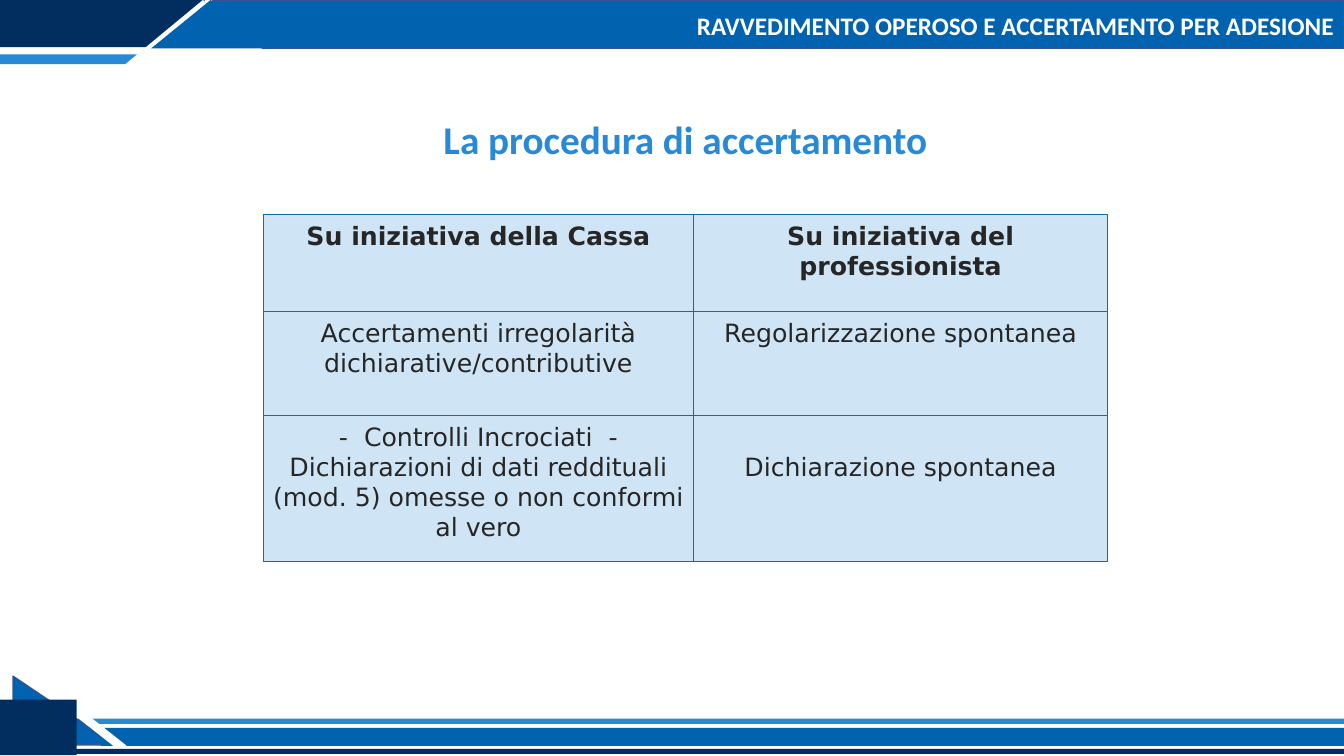
from dataclasses import dataclass
from itertools import accumulate

from lxml import etree
from pptx import Presentation
from pptx import util as u
from pptx.dml.color import RGBColor
from pptx.enum import shapes, text
from pptx.oxml import ns


@dataclass(frozen=True)
class Theme:
    navy: str = "022E5F"
    blue: str = "0162AF"
    sky: str = "2889D6"
    white: str = "FFFFFF"
    outline: str = "325491"
    cell_outline: str = "0073B2"
    ink: str = "262626"
    cell_opacity: int = 22
    heading_font: str = "Calibri"
    cell_font: str = "DejaVu Sans"
    banner_size: int = 18
    title_size: int = 28
    cell_size: int = 18


THEME = Theme()
KIND = shapes.MSO_SHAPE
ALIGN = text.PP_ALIGN
ANCHOR = text.MSO_ANCHOR
SLIDE_W, SLIDE_H = 33.87, 19.05


def rgb(value):
    return RGBColor.from_string(value)


def cm(*lengths):
    return [u.Cm(length) for length in lengths]


def add_block(slide, kind, place, fill, line=None, line_width=1):
    block = slide.shapes.add_shape(kind, *cm(*place))
    block.shadow.inherit = False
    block.fill.solid()
    block.fill.fore_color.rgb = rgb(fill)
    if line:
        block.line.color.rgb = rgb(line)
        block.line.width = u.Pt(line_width)
    else:
        block.line.fill.background()
    return block


def write(frame, wording, font, size, color, bold, align):
    frame.word_wrap = True
    frame.text = wording
    for paragraph in frame.paragraphs:
        paragraph.alignment = align
        paragraph.font.name = font
        paragraph.font.size = u.Pt(size)
        paragraph.font.bold = bold
        paragraph.font.color.rgb = rgb(color)


def add_header(slide, box, wording):
    x, y, w, h = box
    add_block(slide, KIND.RECTANGLE, (x + 5.36, y + 0.03, w - 5.36, 1.19), THEME.blue, THEME.outline)
    add_block(slide, KIND.RECTANGLE, (x, y + 1.37, 3.45, 0.25), THEME.sky)
    add_block(slide, KIND.RECTANGLE, (x, y, 5.16, 1.19), THEME.navy)
    add_block(slide, KIND.ISOSCELES_TRIANGLE, (x + 3.12, y, 3.99, h), THEME.white)
    add_block(slide, KIND.ISOSCELES_TRIANGLE, (x + 3.81, y, 3, 1.22), THEME.blue)
    banner = slide.shapes.add_textbox(*cm(x + 5.03, y + 0.1, w - 5.03, 1.19)).text_frame
    write(banner, wording, THEME.heading_font, THEME.banner_size, THEME.white, True, ALIGN.RIGHT)
    banner.vertical_anchor = ANCHOR.MIDDLE
    banner.paragraphs[0].line_spacing = 0.9


def add_footer(slide, box):
    x, y, w, h = box
    add_block(slide, KIND.RECTANGLE, (x + 1.93, y + 1.07, w - 1.93, 0.13), THEME.sky)
    add_block(slide, KIND.RIGHT_TRIANGLE, (x + 0.33, y, 2.57, 1.73), THEME.blue, THEME.outline)
    add_block(slide, KIND.RECTANGLE, (x + 2.54, y + 1.3, w - 2.54, 0.46), THEME.blue)
    slash = slide.shapes.add_connector(
        shapes.MSO_CONNECTOR.STRAIGHT, *cm(x + 3.12, y + 1.83, x + 1.93, y + 0.89))
    slash.line.color.rgb = rgb(THEME.white)
    slash.line.width = u.Pt(6)
    etree.SubElement(slash._element.spPr, ns.qn("a:effectLst"))
    add_block(slide, KIND.RECTANGLE, (x, y + 0.59, 1.93, h - 0.61), THEME.navy)
    add_block(slide, KIND.RECTANGLE, (x + 1.65, y + 1.83, w - 1.65, 0.13), THEME.navy)


def add_title(slide, box, wording):
    title = slide.shapes.add_textbox(*cm(*box)).text_frame
    write(title, wording, THEME.heading_font, THEME.title_size, THEME.sky, True, ALIGN.CENTER)


def add_cell(slide, box, wording, bold, top_margin):
    cell = add_block(slide, KIND.RECTANGLE, box, THEME.sky, THEME.cell_outline, 0.75)
    color = cell._element.spPr.find(ns.qn("a:solidFill"))[0]
    etree.SubElement(color, ns.qn("a:alpha"), val=str(THEME.cell_opacity * 1000))
    frame = cell.text_frame
    write(frame, wording, THEME.cell_font, THEME.cell_size, THEME.ink, bold, ALIGN.CENTER)
    frame.vertical_anchor = ANCHOR.TOP
    frame.margin_top = u.Cm(top_margin)


def add_procedures(slide, box, rows):
    x, y, w, h = box
    widths = (0.51 * w, 0.49 * w)
    heights = (0.28 * h, 0.3 * h, 0.42 * h)
    lefts = accumulate(widths[:-1], initial=x)
    columns = list(zip(lefts, widths))
    tops = accumulate(heights[:-1], initial=y)
    for row, (top, height, wordings) in enumerate(zip(tops, heights, rows)):
        for (left, width), wording in zip(columns, wordings):
            lowered = wording == "Dichiarazione spontanea"
            add_cell(slide, (left, top, width, height), wording, row == 0, 0.89 if lowered else 0.13)


def main():
    deck = Presentation()
    deck.slide_width, deck.slide_height = cm(SLIDE_W, SLIDE_H)
    slide = deck.slides.add_slide(deck.slide_layouts[6])
    add_header(slide, (0, 0, SLIDE_W, 1.65), "RAVVEDIMENTO OPEROSO E ACCERTAMENTO PER ADESIONE")
    add_footer(slide, (0, 17.04, SLIDE_W, 2.01))
    add_title(slide, (2.64, 2.77, 29.26, 1.45), "La procedura di accertamento")
    add_procedures(slide, (6.63, 5.41, 21.28, 8.74), (
        ("Su iniziativa della Cassa", "Su iniziativa del professionista"),
        ("Accertamenti irregolarità dichiarative/contributive", "Regolarizzazione spontanea"),
        ("-  Controlli Incrociati  -\n"
         "Dichiarazioni di dati reddituali (mod. 5) omesse o non conformi al vero",
         "Dichiarazione spontanea"),
    ))
    deck.save("out.pptx")


if __name__ == "__main__":
    main()
